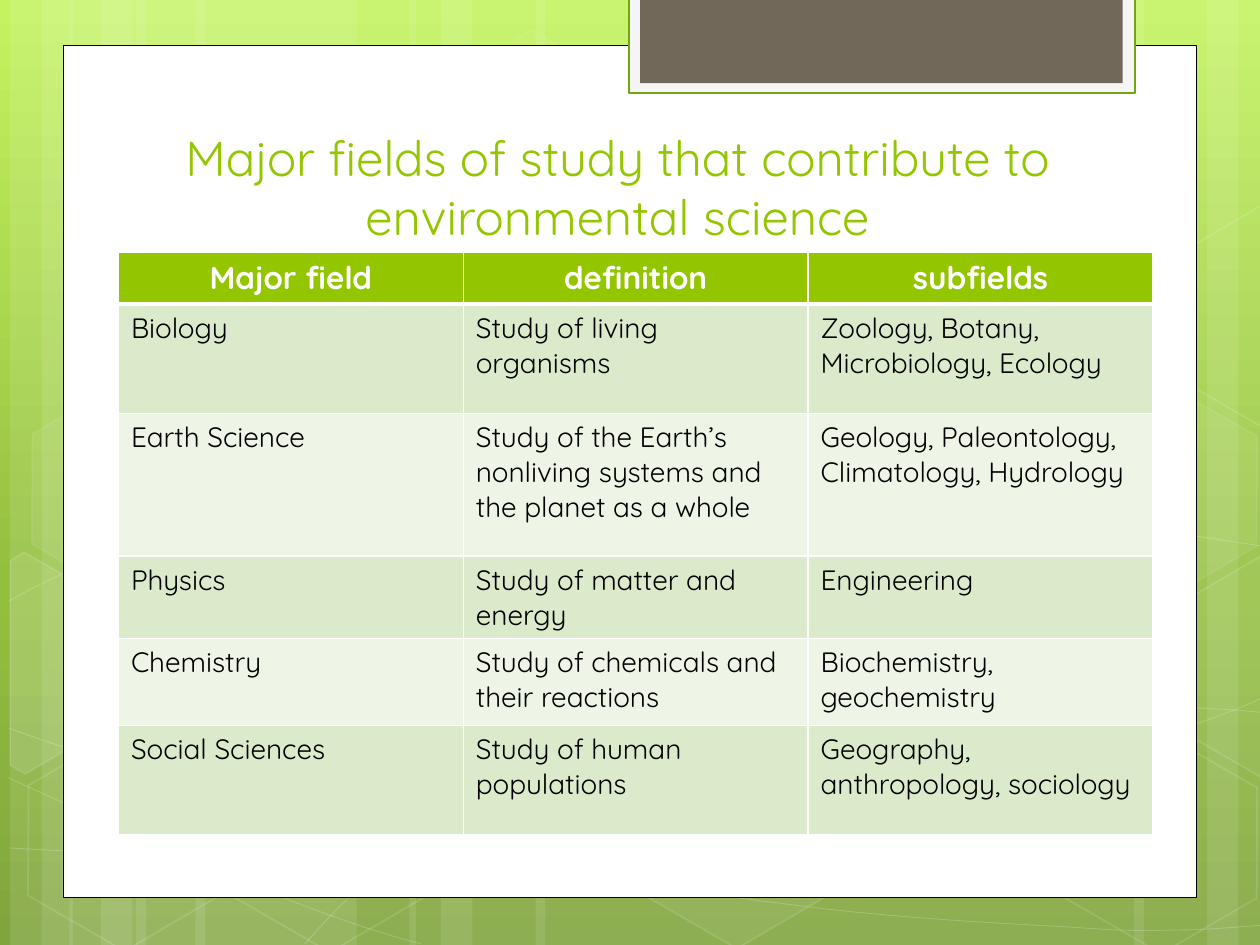
from copy import deepcopy
from math import cos, radians, sin
from typing import NamedTuple, Optional

from lxml import etree
from pptx import Presentation
from pptx.dml.color import RGBColor
from pptx.enum import shapes, text
from pptx.oxml.ns import qn
from pptx.util import Inches, Pt

COLORS = {
    "white": "FFFFFF", "black": "000000", "accent": "94C600", "tab": "F5F5F5",
    "tab_line": "74A510", "tab_core": "71685A", "odd": "DCEACC", "even": "EEF5E7",
}
BACKGROUND = [(0, "C3F35F"), (0.62, "93BF3F"), (1, "81A53E")]
FONT = "Quicksand"
TILT = 30
Point = tuple[float, float]


class Stripe(NamedTuple):
    left: float
    width: float


class Hexagon(NamedTuple):
    left: float
    top: float
    fill_alpha: int
    line_alpha: int


class CutHexagon(NamedTuple):
    """A tilted hexagon clipped by the slide edge; points as seen after the tilt."""
    center: Point
    points: list[Point]
    fill_alpha: int


class Panel(NamedTuple):
    left: float
    top: float
    width: float
    height: float
    fill: str
    line: Optional[str] = None
    line_width: float = 0


STRIPES = [Stripe(*s) for s in (
    (1.08, 1.75), (0.08, 0.5), (0.33, 0.83), (1.55, 1.75), (0.55, 0.5), (0.8, 0.83),
    (7.33, 1.75), (9.58, 0.5), (9, 0.83), (4.25, 3.08), (3.25, 0.5), (3.5, 0.83))]

# Each wave is a start point followed by groups of three cubic Bézier points.
WAVES = [
    [(0.07, 6.73), (0.61, 6.76), (1.15, 6.79), (1.9, 6.78), (2.65, 6.77), (3.58, 6.75),
     (4.58, 6.65), (5.58, 6.55), (7, 6.36), (7.92, 6.17), (8.83, 5.98), (9.77, 5.68),
     (10.07, 5.51)],
    [(0.07, 4.77), (0.36, 4.61), (0.65, 4.46), (1.21, 4.31), (1.78, 4.16), (2.59, 3.94),
     (3.47, 3.87), (4.36, 3.8), (5.44, 3.79), (6.54, 3.87), (7.64, 3.95), (9.47, 4.26),
     (10.07, 4.34)],
    [(0.06, 6.17), (1.27, 6.72), (2.47, 7.27), (3.34, 7.49)],
    [(0.07, 5.78), (0.38, 5.89), (0.7, 6), (1.28, 6.16), (1.86, 6.31), (2.73, 6.56),
     (3.57, 6.73), (4.4, 6.9), (5.45, 7.08), (6.28, 7.18), (7.11, 7.29), (8, 7.33),
     (8.53, 7.36), (9.05, 7.4), (9.19, 7.38), (9.45, 7.38), (9.71, 7.37), (9.89, 7.35),
     (10.07, 7.34)],
    [(2.42, 7.49), (2.6, 7.29), (2.78, 7.09), (3.02, 6.91), (3.26, 6.73), (3.6, 6.53),
     (3.88, 6.39), (4.16, 6.25), (4.33, 6.19), (4.7, 6.09), (5.06, 5.99), (5.73, 5.85),
     (6.08, 5.78), (6.44, 5.71), (6.49, 5.71), (6.8, 5.69), (7.11, 5.66), (7.6, 5.63),
     (7.94, 5.62), (8.29, 5.61), (8.86, 5.62), (8.86, 5.62), (8.86, 5.62), (9.53, 5.62),
     (9.53, 5.62), (9.71, 5.63), (9.88, 5.64), (9.97, 5.65), (10.06, 5.66),
     (10.03, 5.65), (10.06, 5.66)],
]

HEXAGONS = [Hexagon(*h) for h in (
    (3.34, 0.36, 4, 8), (4.97, 5.89, 6, 12), (0.11, 5.91, 0, 12), (0.14, 3.12, 7, 8),
    (1.74, 5.92, 0, 12), (7.53, 4.53, 10, 12), (8.34, 5.93, 0, 12), (8.34, 3.14, 7, 8))]

CUT_HEXAGONS = [
    CutHexagon((0.36, 5.35), [(0.08, 4.45), (0.19, 4.38), (0.96, 4.82), (0.95, 5.7),
                              (0.2, 6.14), (0.08, 6.07)], 10),
    CutHexagon((9.85, 5.2), [(9.26, 4.85), (10.01, 4.41), (10.09, 4.46), (10.09, 6.13),
                             (10.02, 6.17), (9.26, 5.73)], 4),
    CutHexagon((9.85, 2.41), [(9.26, 2.07), (10.01, 1.63), (10.1, 1.68), (10.09, 3.35),
                              (10.02, 3.39), (9.26, 2.95)], 0),
]

PANELS = [
    Panel(0.5, 0.36, 9, 6.76, "white", "black", 0.5),
    Panel(4.99, -0.02, 4.02, 0.76, "tab", "tab_line", 1.25),
    Panel(5.08, -0.02, 3.83, 0.68, "tab_core"),
]

TITLE = "Major fields of study that contribute to environmental science"
FIELDS = [
    ("Major field", "definition", "subfields"),
    ("Biology", "Study of living organisms", "Zoology, Botany, Microbiology, Ecology"),
    ("Earth Science", "Study of the Earth’s nonliving systems and the planet as a whole",
     "Geology, Paleontology, Climatology, Hydrology"),
    ("Physics", "Study of matter and energy", "Engineering"),
    ("Chemistry", "Study of chemicals and their reactions", "Biochemistry, geochemistry"),
    ("Social Sciences", "Study of human populations", "Geography, anthropology, sociology"),
]
ROW_HEIGHTS = [0.4, 0.87, 1.13, 0.65, 0.69, 0.87]


def rgb(name: str) -> RGBColor:
    return RGBColor.from_string(COLORS[name])


def paint(fill, color: Optional[str], alpha: int = 100) -> None:
    """Fill with a colour at alpha percent opacity, or with nothing."""
    if color is None or alpha == 0:
        fill.background()
        return
    fill.solid()
    fill.fore_color.rgb = rgb(color)
    if alpha < 100:
        srgb = fill._xPr.find(".//" + qn("a:srgbClr"))
        etree.SubElement(srgb, qn("a:alpha"), val=str(alpha * 1000))


def style(shape, fill: Optional[str], fill_alpha: int = 100, line: Optional[str] = None,
          line_width: float = 0, line_alpha: int = 100) -> None:
    shape.shadow.inherit = False
    paint(shape.fill, fill, fill_alpha)
    paint(shape.line.fill, line, line_alpha)
    if line:
        shape.line.width = Pt(line_width)


def draw_shape(slide, kind, left: float, top: float, width: float, height: float):
    return slide.shapes.add_shape(kind, Inches(left), Inches(top), Inches(width), Inches(height))


def draw_outline(slide, points: list[Point], close: bool):
    start, *rest = [(Inches(x), Inches(y)) for x, y in points]
    builder = slide.shapes.build_freeform(*start)
    builder.add_line_segments(rest, close=close)
    return builder.convert_to_shape()


def draw_wave(slide, wave: list[Point]):
    """Outline the Bézier points, then merge each three steps into one curve."""
    shape = draw_outline(slide, wave, False)
    steps = list(shape._element.iter(qn("a:lnTo")))
    for first in range(0, len(steps), 3):
        group = steps[first:first + 3]
        curve = etree.Element(qn("a:cubicBezTo"))
        group[0].addprevious(curve)
        for step in group:
            curve.append(step[0])
            step.getparent().remove(step)
    return shape


def untilt(point: Point, center: Point) -> Point:
    dx, dy = point[0] - center[0], point[1] - center[1]
    c, s = cos(radians(TILT)), sin(radians(TILT))
    return center[0] + c * dx + s * dy, center[1] - s * dx + c * dy


def draw_background(slide) -> None:
    fill = slide.background.fill
    fill.gradient()
    fill.gradient_angle = 270
    stop_list = slide.element.find(".//" + qn("a:gsLst"))
    stop_list.insert(1, deepcopy(stop_list[0]))
    for stop, (position, color) in zip(fill.gradient_stops, BACKGROUND):
        stop.position = position
        stop.color.rgb = RGBColor.from_string(color)


def draw_decoration(slide) -> None:
    for stripe in STRIPES:
        style(draw_shape(slide, shapes.MSO_SHAPE.RECTANGLE, stripe.left, 0, stripe.width, 7.5),
              "white", 10)
    for wave in WAVES:
        style(draw_wave(slide, wave), None, 0, "white", 0.5, 20)
    for hexagon in HEXAGONS:
        cell = draw_shape(slide, shapes.MSO_SHAPE.HEXAGON, hexagon.left, hexagon.top, 1.75, 1.52)
        cell.rotation = TILT
        cell.adjustments[0] = 0.285
        style(cell, "white", hexagon.fill_alpha, "white", 1, hexagon.line_alpha)
    for cut in CUT_HEXAGONS:
        piece = draw_outline(slide, [untilt(p, cut.center) for p in cut.points], True)
        piece.rotation = TILT
        style(piece, "white", cut.fill_alpha, "white", 1, 12)
    for panel in PANELS:
        style(draw_shape(slide, shapes.MSO_SHAPE.RECTANGLE, *panel[:4]),
              panel.fill, 100, panel.line, panel.line_width)


def format_text(paragraph, size: int, color: str, bold: bool, centered: bool) -> None:
    paragraph.alignment = text.PP_ALIGN.CENTER if centered else text.PP_ALIGN.LEFT
    for run in paragraph.runs:
        run.font.name, run.font.size, run.font.bold = FONT, Pt(size), bold
        run.font.color.rgb = rgb(color)


def draw_title(slide) -> None:
    title = slide.shapes.title
    slide.shapes._spTree.append(title._element)  # in front of the panels
    title.left, title.top, title.width, title.height = map(Inches, (1.06, 0.75, 7.68, 1.25))
    title.text_frame.text = TITLE
    title.text_frame.vertical_anchor = text.MSO_ANCHOR.BOTTOM
    format_text(title.text_frame.paragraphs[0], 28, "accent", False, True)


def set_borders(cell, widths: dict[str, int]) -> None:
    properties = cell._tc.get_or_add_tcPr()
    for index, (side, width) in enumerate(widths.items()):
        line = etree.Element(qn("a:" + side), w=str(Pt(width)))
        fill = etree.SubElement(line, qn("a:solidFill"))
        etree.SubElement(fill, qn("a:srgbClr"), val=COLORS["white"])
        properties.insert(index, line)


def draw_fields(slide) -> None:
    table = slide.shapes.add_table(len(FIELDS), 3, Inches(0.94), Inches(2), Inches(8.21),
                                   Inches(sum(ROW_HEIGHTS))).table
    for r, (height, field) in enumerate(zip(ROW_HEIGHTS, FIELDS)):
        table.rows[r].height = Inches(height)
        header = r == 0
        for c, words in enumerate(field):
            cell = table.cell(r, c)
            cell.text_frame.text = words
            format_text(cell.text_frame.paragraphs[0], 18 if header else 16,
                        "white" if header else "black", header, header)
            paint(cell.fill, "accent" if header else "odd" if r % 2 else "even")
            set_borders(cell, {"lnL": 1, "lnR": 1, "lnT": 3 if r == 1 else 1,
                               "lnB": 3 if header else 1})


def main() -> None:
    deck = Presentation()
    deck.slide_width, deck.slide_height = Inches(10), Inches(7.5)
    slide = deck.slides.add_slide(deck.slide_layouts[5])
    draw_background(slide)
    draw_decoration(slide)
    draw_title(slide)
    draw_fields(slide)
    deck.save("out.pptx")


if __name__ == "__main__":
    main()
